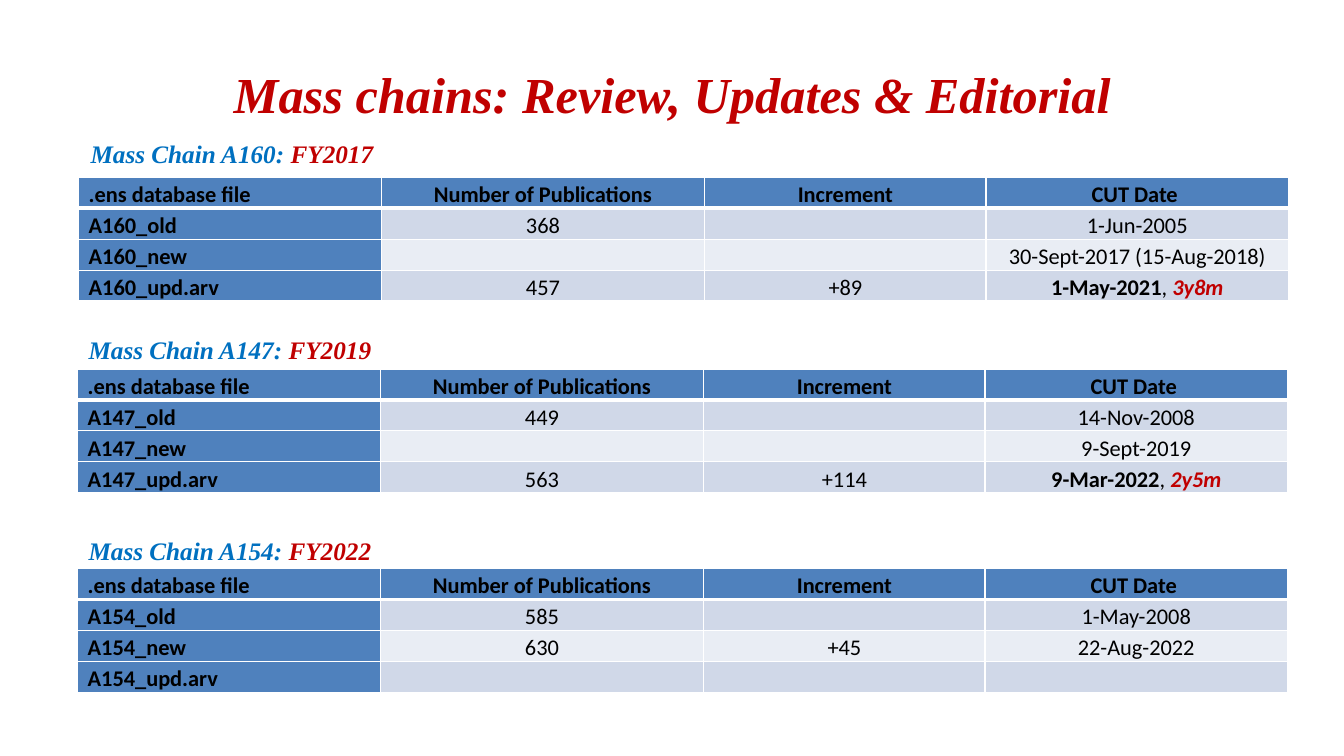
from dataclasses import dataclass

import pptx
import pptx.dml.color
import pptx.enum.text
import pptx.oxml
import pptx.oxml.ns
import pptx.util
from pptx.util import Inches


@dataclass(frozen=True)
class Theme:
    serif: str = "Times New Roman"
    sans: str = "Calibri"
    red: str = "C00000"
    blue: str = "0070C0"
    black: str = "000000"
    border: str = "FFFFFF"
    header: str = "4F81BD"
    bands: tuple = ("D0D8E8", "E9EDF4")
    title_size: int = 36
    heading_size: int = 18
    table_size: int = 16


THEME = Theme()
ALIGN = pptx.enum.text.PP_ALIGN
ANCHOR = pptx.enum.text.MSO_ANCHOR
COLUMN_WIDTHS = (3, 3.21, 2.79, 3)
ROW_HEIGHT = 0.3
HEADER = (".ens database file", "Number of Publications", "Increment", "CUT Date ")


@dataclass(frozen=True)
class MassChain:
    name: str
    year: str
    heading_box: tuple
    table_corner: tuple
    rows: tuple


CHAINS = (
    MassChain("A160", "FY2017", (0.8, 1.32, 12.5, 0.4), (0.78, 1.76), (
        ("old", "368", "", "1-Jun-2005"),
        ("new", "", "", "30-Sept-2017 (15-Aug-2018)"),
        ("upd.arv", "457", "+89", ("1-May-2021", "3y8m")),
    )),
    MassChain("A147", "FY2019", (0.78, 3.27, 12.5, 0.4), (0.77, 3.66), (
        ("old", "449", "", "14-Nov-2008"),
        ("new", "", "", "9-Sept-2019"),
        ("upd.arv", "563", "+114", ("9-Mar-2022", "2y5m")),
    )),
    MassChain("A154", "FY2022", (0.78, 5.26, 3.03, 0.4), (0.77, 5.64), (
        ("old", "585", "", "1-May-2008"),
        ("new", "630", "+45", "22-Aug-2022"),
        ("upd.arv", "", "", ""),
    )),
)


def rgb(value):
    return pptx.dml.color.RGBColor.from_string(value)


def add_run(paragraph, text, font, size, color, bold=False, italic=False):
    run = paragraph.add_run()
    run.text = text
    run.font.name = font
    run.font.size = pptx.util.Pt(size)
    run.font.bold = bold
    run.font.italic = italic
    run.font.color.rgb = rgb(color)


def add_title(slide, text):
    title = slide.shapes.title
    title.left, title.top = Inches(0.67), Inches(0.3)
    title.width, title.height = Inches(12), Inches(1.25)
    title.text_frame.vertical_anchor = ANCHOR.MIDDLE
    paragraph = title.text_frame.paragraphs[0]
    paragraph.alignment = ALIGN.CENTER
    add_run(paragraph, text, THEME.serif, THEME.title_size, THEME.red, True, True)


def add_heading(slide, chain):
    box = slide.shapes.add_textbox(*map(Inches, chain.heading_box))
    frame = box.text_frame
    frame.word_wrap = True
    frame.vertical_anchor = ANCHOR.MIDDLE
    paragraph = frame.paragraphs[0]
    for text, color in ((f"Mass Chain {chain.name}: ", THEME.blue), (chain.year, THEME.red)):
        add_run(paragraph, text, THEME.serif, THEME.heading_size, color, True, True)


def set_borders(cell, row_index):
    properties = cell._tc.get_or_add_tcPr()
    widths = {"L": 1, "R": 1, "T": 3 if row_index == 1 else 1, "B": 3 if row_index == 0 else 1}
    for side, width in widths.items():
        properties.append(pptx.oxml.parse_xml(
            f'<a:ln{side} {pptx.oxml.ns.nsdecls("a")} w="{pptx.util.Pt(width)}">'
            f'<a:solidFill><a:srgbClr val="{THEME.border}"/></a:solidFill></a:ln{side}>'
        ))


def fill_cell(cell, content, row_index, column_index):
    is_header = row_index == 0 or column_index == 0
    set_borders(cell, row_index)
    cell.fill.solid()
    cell.fill.fore_color.rgb = rgb(THEME.header if is_header else THEME.bands[(row_index - 1) % 2])
    cell.margin_left = cell.margin_right = Inches(0.1)
    cell.margin_top = cell.margin_bottom = 0
    if not content:
        return
    paragraph = cell.text_frame.paragraphs[0]
    paragraph.alignment = ALIGN.CENTER if column_index else ALIGN.LEFT
    paragraph.line_spacing = 1.15
    style = THEME.sans, THEME.table_size
    if isinstance(content, tuple):
        date, elapsed = content
        add_run(paragraph, date, *style, THEME.black, True)
        add_run(paragraph, ", ", *style, THEME.black)
        add_run(paragraph, elapsed, *style, THEME.red, True, True)
    else:
        add_run(paragraph, content, *style, THEME.black, is_header)


def add_chain_table(slide, chain):
    rows = [HEADER] + [(f"{chain.name}_{suffix}", *values) for suffix, *values in chain.rows]
    left, top = chain.table_corner
    table = slide.shapes.add_table(
        len(rows), len(HEADER), Inches(left), Inches(top),
        Inches(sum(COLUMN_WIDTHS)), Inches(ROW_HEIGHT * len(rows)),
    ).table
    for column, width in zip(table.columns, COLUMN_WIDTHS):
        column.width = Inches(width)
    for row_index, row in enumerate(rows):
        table.rows[row_index].height = Inches(ROW_HEIGHT)
        for column_index, content in enumerate(row):
            fill_cell(table.cell(row_index, column_index), content, row_index, column_index)


def main():
    presentation = pptx.Presentation()
    presentation.slide_width = Inches(13.33)
    presentation.slide_height = Inches(7.5)
    slide = presentation.slides.add_slide(presentation.slide_layouts.get_by_name("Title Only"))
    add_title(slide, "Mass chains: Review, Updates & Editorial")
    for chain in CHAINS:
        add_heading(slide, chain)
        add_chain_table(slide, chain)
    presentation.save("out.pptx")


if __name__ == "__main__":
    main()
